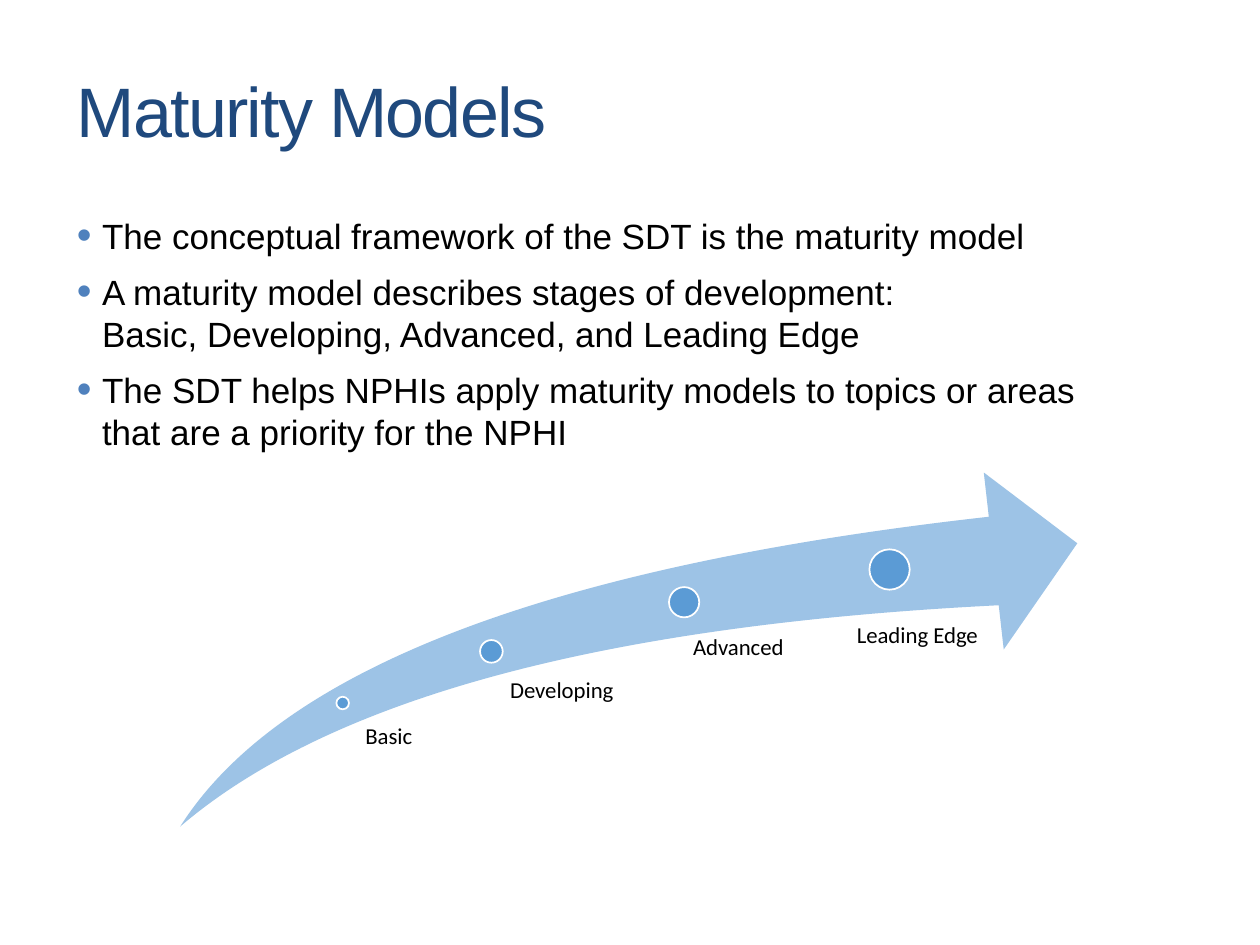
"""Build the Maturity Models slide."""
from dataclasses import dataclass

from lxml.etree import SubElement
from pptx import Presentation
from pptx.dml.color import RGBColor as Color
from pptx.enum.shapes import MSO_SHAPE as Preset
from pptx.enum.text import MSO_ANCHOR as Anchor, MSO_AUTO_SIZE as AutoSize, PP_ALIGN as Align
from pptx.oxml.ns import qn
from pptx.shapes.base import BaseShape
from pptx.slide import Slide
from pptx.text.text import Font, _Paragraph as Paragraph
from pptx.util import Inches, Pt


@dataclass(frozen=True)
class Theme:
    """Colours, fonts and type sizes of the slide."""
    title_color: str = "1F497D"
    text_color: str = "000000"
    bullet_color: str = "4F81BD"
    arrow_color: str = "9DC3E6"
    dot_color: str = "5B9BD5"
    outline_color: str = "FFFFFF"
    main_font: str = "Arial"
    label_font: str = "Calibri"
    title_size: int = 40
    body_size: int = 20
    label_size: int = 13


@dataclass(frozen=True)
class Box:
    """A rectangle in inches."""
    left: float
    top: float
    width: float
    height: float

    def lengths(self) -> tuple[Inches, ...]:
        """Return the four values as slide lengths."""
        return tuple(Inches(value) for value in (self.left, self.top, self.width, self.height))


@dataclass(frozen=True)
class Stage:
    """A maturity stage: its dot on the arrow and its label."""
    name: str
    dot_left: float
    dot_top: float
    diameter: float
    label: Box
    inset: float


THEME = Theme()
TITLE_BOX = Box(0.51, 0.33, 9, 1.08)
BODY_BOX = Box(0.51, 1.65, 8.49, 2.6)
ARROW_BOX = Box(1.43, 3.75, 7.12, 2.81)
BULLETS = (
    "The conceptual framework of the SDT is the maturity model",
    "A maturity model describes stages of development:\vBasic, Developing, Advanced, and Leading Edge",
    "The SDT helps NPHIs apply maturity models to topics or areas that are a priority for the NPHI",
)
STAGES = (
    Stage("Basic", 2.67, 5.53, 0.1, Box(2.85, 5.75, 0.77, 0.67), 0.05),
    Stage("Developing", 3.81, 5.08, 0.18, Box(3.95, 5.39, 0.94, 0.37), 0.1),
    Stage("Advanced", 5.31, 4.66, 0.24, Box(5.37, 5.05, 0.88, 0.39), 0.13),
    Stage("Leading Edge", 6.9, 4.36, 0.32, Box(6.63, 4.95, 1.34, 0.25), 0.17),
)


def place(shape: BaseShape, box: Box) -> None:
    """Move and size a shape."""
    shape.left, shape.top, shape.width, shape.height = box.lengths()


def style_font(font: Font, name: str, size: int, color: str) -> None:
    """Set the face, size and colour of a font."""
    font.name = name
    font.size = Pt(size)
    font.color.rgb = Color.from_string(color)


def add_bullet(paragraph: Paragraph) -> None:
    """Give a paragraph a coloured, enlarged hanging bullet."""
    properties = paragraph._p.get_or_add_pPr()
    properties.set("marL", str(Inches(0.2)))
    properties.set("indent", str(Inches(-0.2)))
    color = SubElement(properties, qn("a:buClr"))
    SubElement(color, qn("a:srgbClr"), val=THEME.bullet_color)
    SubElement(properties, qn("a:buSzPct"), val="120000")
    SubElement(properties, qn("a:buFont"), typeface=THEME.main_font)
    SubElement(properties, qn("a:buChar"), char="•")


def fill_title(slide: Slide) -> None:
    """Write and format the title placeholder."""
    title = slide.shapes.title
    place(title, TITLE_BOX)
    frame = title.text_frame
    frame.text = "Maturity Models"
    frame.vertical_anchor = Anchor.MIDDLE
    paragraph = frame.paragraphs[0]
    paragraph.alignment = Align.LEFT
    font = paragraph.runs[0].font
    style_font(font, THEME.main_font, THEME.title_size, THEME.title_color)
    font._element.set("spc", "-100")


def fill_body(slide: Slide) -> None:
    """Write and format the bulleted list."""
    body = slide.placeholders[1]
    place(body, BODY_BOX)
    frame = body.text_frame
    frame.text = "\n".join(BULLETS)
    frame.auto_size = AutoSize.NONE
    for index, paragraph in enumerate(frame.paragraphs):
        add_bullet(paragraph)
        paragraph.space_before = Pt(6 if index else 0)
        paragraph.space_after = Pt(2)
        for run in paragraph.runs:
            style_font(run.font, THEME.main_font, THEME.body_size, THEME.text_color)


def add_filled(slide: Slide, preset: Preset, box: Box, color: str) -> BaseShape:
    """Add a preset shape with a plain fill and no outline."""
    shape = slide.shapes.add_shape(preset, *box.lengths())
    shape.shadow.inherit = False
    shape.fill.solid()
    shape.fill.fore_color.rgb = Color.from_string(color)
    shape.line.fill.background()
    return shape


def add_arrow(slide: Slide) -> None:
    """Add the rising arrow."""
    arrow = add_filled(slide, Preset.SWOOSH_ARROW, ARROW_BOX, THEME.arrow_color)
    arrow.adjustments[0] = arrow.adjustments[1] = 0.25


def add_stage(slide: Slide, stage: Stage) -> None:
    """Add the dot and the label of one stage."""
    dot_box = Box(stage.dot_left, stage.dot_top, stage.diameter, stage.diameter)
    dot = add_filled(slide, Preset.OVAL, dot_box, THEME.dot_color)
    dot.line.color.rgb = Color.from_string(THEME.outline_color)
    dot.line.width = Pt(1)
    frame = slide.shapes.add_textbox(*stage.label.lengths()).text_frame
    frame.text = stage.name
    frame.word_wrap = True
    frame.margin_left = Inches(stage.inset)
    frame.margin_top = frame.margin_right = frame.margin_bottom = 0
    paragraph = frame.paragraphs[0]
    paragraph.line_spacing = 0.9
    style_font(paragraph.runs[0].font, THEME.label_font, THEME.label_size, THEME.text_color)


def main() -> None:
    """Build and save the presentation."""
    presentation = Presentation()
    presentation.slide_width, presentation.slide_height = Inches(10), Inches(7.5)
    slide = presentation.slides.add_slide(presentation.slide_layouts[1])
    fill_title(slide)
    fill_body(slide)
    add_arrow(slide)
    for stage in STAGES:
        add_stage(slide, stage)
    presentation.save("out.pptx")


if __name__ == "__main__":
    main()
